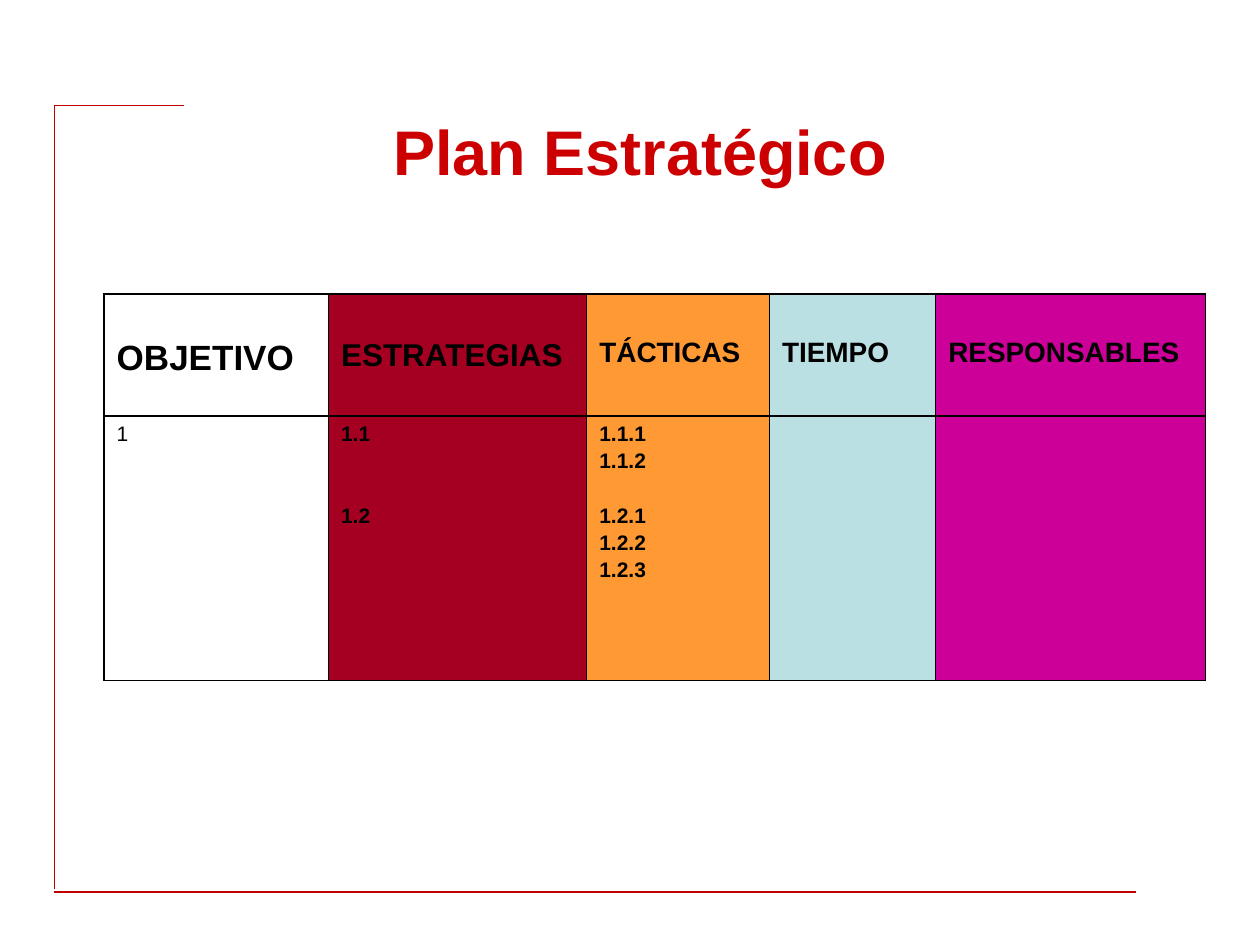
from typing import NamedTuple

from lxml import etree
from pptx import Presentation
from pptx import util as u
from pptx.dml.color import RGBColor
from pptx.enum import shapes, text
from pptx.oxml import ns

Pt = u.Pt
FONT = "Arial"
BLACK = RGBColor(0, 0, 0)
WHITE = RGBColor(255, 255, 255)
RED = RGBColor(0xCC, 0, 0)
RULE = RGBColor(0xC0, 0, 0)
WINE = RGBColor(0xA5, 0, 0x21)
ORANGE = RGBColor(0xFF, 0x99, 0x33)
AQUA = RGBColor(0xBB, 0xE0, 0xE3)
PINK = RGBColor(0xCC, 0, 0x99)
STEP = 15.8  # height of one body line with its gap
GAP = 2      # space between body lines


class Line(NamedTuple):
    x1: float
    y1: float
    x2: float
    y2: float


class Item(NamedTuple):
    label: str
    skip: int = 0  # lines left free above


class Column(NamedTuple):
    head: str
    size: int
    width: float
    fill: RGBColor
    items: tuple = ()
    bold: bool = True


LINES = [
    Line(105.1, 60.2, 31, 60.2),
    Line(31, 60.2, 31, 508.3),
    Line(31, 509.8, 649.4, 509.8),
]
COLUMNS = [
    Column("OBJETIVO", 20, 128.2, WHITE, (Item("1"),), False),
    Column("ESTRATEGIAS", 18, 147.6, WINE, (Item("1.1"), Item("1.2", 2))),
    Column("TÁCTICAS", 16, 104.4, ORANGE,
           (Item("1.1.1"), Item("1.1.2"), Item("1.2.1", 1),
            Item("1.2.2"), Item("1.2.3"))),
    Column("TIEMPO", 16, 95, AQUA),
    Column("RESPONSABLES", 16, 154.1, PINK),
]
ROWS = [69.8, 151.2]


def style(para, size: float, color: RGBColor, bold: bool = True) -> None:
    for run in para.runs:
        font = run.font
        font.name, font.size, font.bold = FONT, Pt(size), bold
        font.color.rgb = color


def rule(slide, line: Line) -> None:
    ends = [Pt(v) for v in line]
    shape = slide.shapes.add_connector(shapes.MSO_CONNECTOR.STRAIGHT, *ends)
    shape.line.color.rgb = RULE
    shape.line.width = Pt(0.75)
    etree.SubElement(shape._element.spPr, ns.qn("a:effectLst"))


def paint(cell, fill: RGBColor) -> None:
    """Set black borders, then the fill, which must follow them."""
    props = cell._tc.get_or_add_tcPr()
    for side in ("lnL", "lnR", "lnT", "lnB"):
        edge = etree.SubElement(props, ns.qn(f"a:{side}"), w=str(Pt(1)))
        solid = etree.SubElement(edge, ns.qn("a:solidFill"))
        etree.SubElement(solid, ns.qn("a:srgbClr"), val=str(BLACK))
    cell.fill.solid()
    cell.fill.fore_color.rgb = fill


def fill_column(table, index: int, col: Column) -> None:
    table.columns[index].width = Pt(col.width)
    head, body = table.cell(0, index), table.cell(1, index)
    for cell in (head, body):
        paint(cell, col.fill)
    head.margin_top = Pt(21.6 + 0.2 * col.size)
    head.text_frame.text = col.head
    style(head.text_frame.paragraphs[0], col.size, BLACK)
    if not col.items:
        return
    body.text_frame.text = "\n".join(item.label for item in col.items)
    for n, (para, item) in enumerate(zip(body.text_frame.paragraphs, col.items)):
        if n:
            para.space_before = Pt(GAP + STEP * item.skip)
        style(para, 12, BLACK, col.bold)


def add_grid(slide) -> None:
    width = sum(col.width for col in COLUMNS)
    frame = slide.shapes.add_table(len(ROWS), len(COLUMNS), Pt(59.5), Pt(168),
                                   Pt(width), Pt(sum(ROWS)))
    table = frame.table
    table.first_row = table.horz_banding = False
    for row, height in zip(table.rows, ROWS):
        row.height = Pt(height)
    for index, col in enumerate(COLUMNS):
        fill_column(table, index, col)


def add_title(slide) -> None:
    box = slide.shapes.add_textbox(Pt(59.8), Pt(54.7), Pt(612), Pt(62.6))
    frame = box.text_frame
    frame.word_wrap = True
    frame.vertical_anchor = text.MSO_ANCHOR.MIDDLE
    frame.text = "Plan Estratégico"
    para = frame.paragraphs[0]
    para.alignment = text.PP_ALIGN.CENTER
    style(para, 36, RED)


def main() -> None:
    deck = Presentation()
    deck.slide_width, deck.slide_height = Pt(720), Pt(540)
    slide = deck.slides.add_slide(deck.slide_layouts[6])

    # Frame lines
    for line in LINES:
        rule(slide, line)

    # Plan table and title
    add_grid(slide)
    add_title(slide)
    deck.save("out.pptx")


if __name__ == "__main__":
    main()
